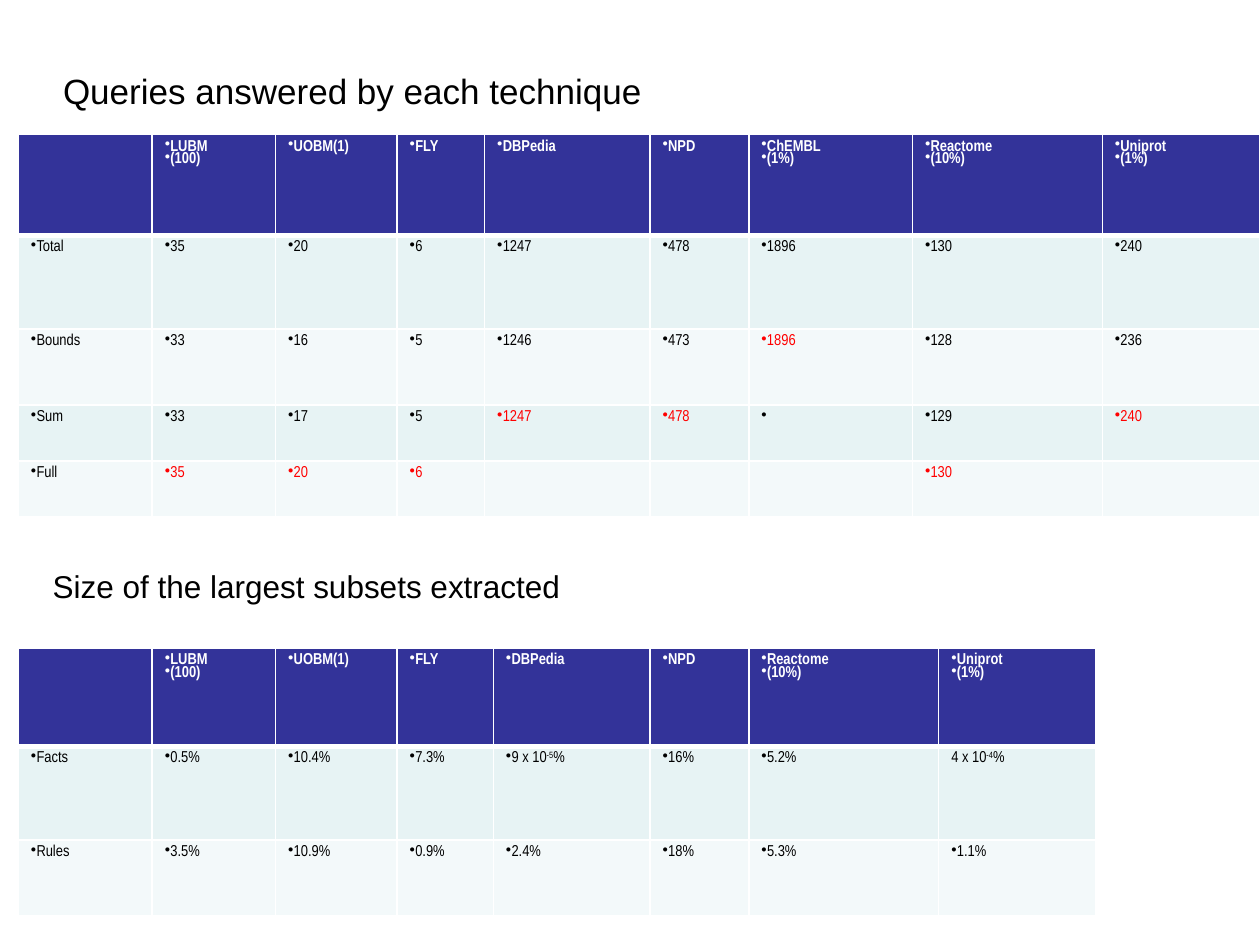
import pptx
import pptx.util
import pptx.dml.color
import pptx.enum.text
from lxml import etree

Pt = pptx.util.Pt
RGB = pptx.dml.color.RGBColor.from_string
NS = "{http://schemas.openxmlformats.org/drawingml/2006/main}"
HUES = {"head": "333399", "dark": "E7F3F4", "light": "F3F9FA",
        "white": "FFFFFF", "black": "000000", "red": "FF0000"}


def write(frame, text, size=9, font="Arial Narrow", hue="black",
          bold=False, bullet=True, lead=0.85):
    """Fill a frame: each line is a paragraph, ^...^ is superscript."""
    for i, line in enumerate(text.split("\n")):
        para = frame.paragraphs[0] if i == 0 else frame.add_paragraph()
        props = para._p.get_or_add_pPr()
        props.set("marL", "0")
        props.set("indent", "0")
        if bullet:
            etree.SubElement(props, NS + "buFontTx")
            etree.SubElement(props, NS + "buChar", char="•")
        else:
            etree.SubElement(props, NS + "buNone")
        para.line_spacing = lead
        para.space_before = Pt(0)
        for j, part in enumerate(line.split("^")):
            run = para.add_run()
            run.text = part
            run.font.size = Pt(size)
            run.font.name = font
            run.font.bold = bold
            run.font.color.rgb = RGB(HUES[hue])
            if j % 2:
                run._r.get_or_add_rPr().set("baseline", "30000")


def edge(cell, side, width):
    """Draw one white border of a cell, ahead of its fill."""
    props = cell._tc.get_or_add_tcPr()
    line = etree.Element(NS + "ln" + side, w=str(Pt(width)))
    fill = etree.SubElement(line, NS + "solidFill")
    etree.SubElement(fill, NS + "srgbClr", val=HUES["white"])
    props.insert("LRTB".index(side), line)


deck = pptx.Presentation()
deck.slide_width, deck.slide_height = Pt(720), Pt(540)
slide = deck.slides.add_slide(deck.slide_layouts[1])
title = slide.shapes.title
title._element.getparent().remove(title._element)

# Heading in the body placeholder
body = slide.placeholders[1]
body.left, body.top, body.width, body.height = Pt(36), Pt(39.6), Pt(648), Pt(443.5)
frame = body.text_frame
frame.auto_size = pptx.enum.text.MSO_AUTO_SIZE.NONE
frame.margin_left = frame.margin_right = frame.margin_top = frame.margin_bottom = 0
write(frame, "Queries answered by each technique", size=20, font="Arial",
      bullet=False, lead=Pt(24))

# Table data: "!" marks a red value, "~" a value without bullet
tables = [
    (77, [76.5, 70.5, 69.5, 50, 94.5, 56.5, 93.5, 108.5, 90],
     [57.5, 53.5, 43.5, 32, 32],
     [["", "LUBM\n(100)", "UOBM(1)", "FLY", "DBPedia", "NPD",
       "ChEMBL\n(1%)", "Reactome\n(10%)", "Uniprot\n(1%)"],
      ["Total", "35", "20", "6", "1247", "478", "1896", "130", "240"],
      ["Bounds", "33", "16", "5", "1246", "473", "!1896", "128", "236"],
      ["Sum", "33", "17", "5", "!1247", "!478", " ", "129", "!240"],
      ["Full", "!35", "!20", "!6", "", "", "", "!130", ""]]),
    (370.5, [76.5, 70.5, 69.5, 55, 89.5, 56.5, 108.5, 90],
     [56, 53.5, 43.5],
     [["", "LUBM\n(100)", "UOBM(1)", "FLY", "DBPedia", "NPD",
       "Reactome\n(10%)", "Uniprot\n(1%)"],
      ["Facts", "0.5%", "10.4%", "7.3%", "9 x 10^-5^%", "16%", "5.2%",
       "~4 x 10^-4^%"],
      ["Rules", "3.5%", "10.9%", "0.9%", "2.4%", "18%", "5.3%", "1.1%"]]),
]

# Tables
for top, cols, rows, data in tables:
    grid = slide.shapes.add_table(len(rows), len(cols), Pt(10.5), Pt(top),
                                  Pt(sum(cols)), Pt(sum(rows))).table
    for c, width in enumerate(cols):
        grid.columns[c].width = Pt(width)
    for r, height in enumerate(rows):
        grid.rows[r].height = Pt(height)
        shade = "head" if r == 0 else "dark" if r % 2 else "light"
        for c, text in enumerate(data[r]):
            cell = grid.cell(r, c)
            cell.fill.solid()
            cell.fill.fore_color.rgb = RGB(HUES[shade])
            for side in "LRTB":
                thick = (r, side) in [(0, "B"), (1, "T")]
                edge(cell, side, 3 if thick else 1)
            if text:
                hue = "white" if r == 0 else "red" if text[0] == "!" else "black"
                write(cell.text_frame, text.lstrip("!~"), hue=hue,
                      bold=r == 0, bullet=text[0] != "~")

# Caption of the second table
box = slide.shapes.add_textbox(Pt(23), Pt(320.5), Pt(307.5), Pt(29))
box.text_frame.word_wrap = False
box.text_frame.auto_size = pptx.enum.text.MSO_AUTO_SIZE.SHAPE_TO_FIT_TEXT
write(box.text_frame, "Size of the largest subsets extracted", size=18,
      font="Arial", bullet=False, lead=1.0)

deck.save("out.pptx")
